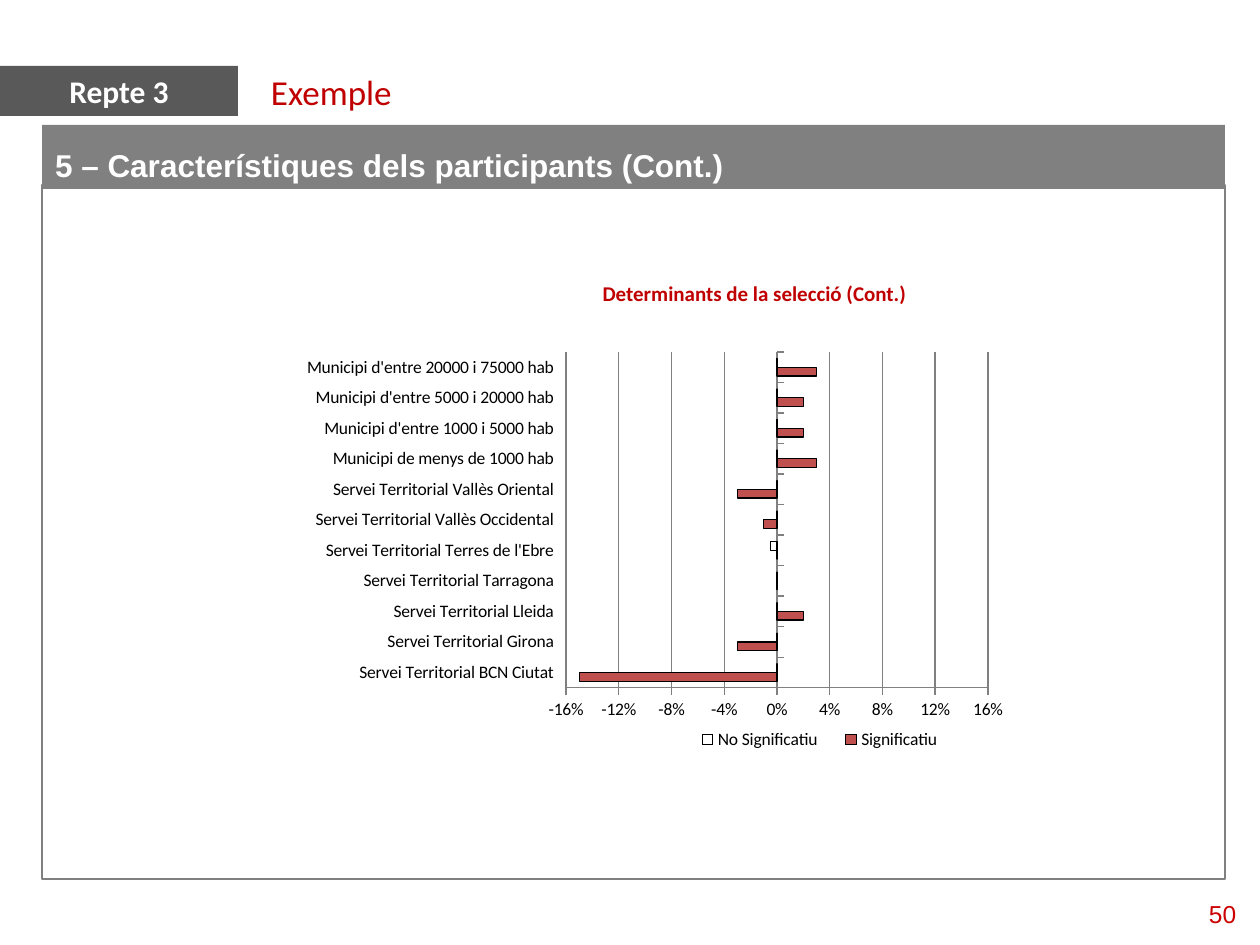
import pptx
import pptx.util
import pptx.chart.data
from lxml import etree
from pptx.dml.color import RGBColor
from pptx.enum.chart import XL_CHART_TYPE, XL_LEGEND_POSITION, XL_TICK_LABEL_POSITION, XL_TICK_MARK
from pptx.enum.shapes import MSO_SHAPE
from pptx.enum.text import MSO_ANCHOR, PP_ALIGN
from pptx.oxml.ns import qn

# Content
COLORS = {"red": "C00000", "number": "CC0000", "grey": "808080", "dark": "595959",
          "bar": "C0504D", "black": "000000", "white": "FFFFFF", "frame": "D9D9D9"}
TITLE = "Exemple"
TAG = "Repte 3"
HEADER = "5 – Característiques dels participants (Cont.)"
CHART_TITLE = "Determinants de la selecció (Cont.)"
PAGE_NUMBER = "50"
SERIES = ("Significatiu", "No Significatiu")
ROWS = [
    ("Servei Territorial BCN Ciutat", -0.15, 0),
    ("Servei Territorial Girona", -0.03, 0),
    ("Servei Territorial Lleida", 0.02, 0),
    ("Servei Territorial Tarragona", 0, 0),
    ("Servei Territorial Terres de l'Ebre", 0, -0.005),
    ("Servei Territorial Vallès Occidental", -0.01, 0),
    ("Servei Territorial Vallès Oriental", -0.03, 0),
    ("Municipi de menys de 1000 hab", 0.03, 0),
    ("Municipi d'entre 1000 i 5000 hab", 0.02, 0),
    ("Municipi d'entre 5000 i 20000 hab", 0.02, 0),
    ("Municipi d'entre 20000 i 75000 hab", 0.03, 0),
]

# Places in px: left, top, width, height
PX = 914400 // 126
BOXES = {
    "number": (1196, 893, 64, 43),
    "title": (258, 64, 928, 50),
    "header": (42, 125, 1183, 64),
    "body": (42, 185, 1183, 694),
    "chart": (292, 344, 725, 423),
    "chart title": (561, 275, 387, 50),
    "tag": (0, 66, 238, 50),
}
PLOT = (566, 352, 422, 336)
LEGEND = (680, 726, 280, 28)


def emu(name):
    return [value * PX for value in BOXES[name]]


def color(name):
    return RGBColor.from_string(COLORS[name])


def set_all(target, **values):
    for name, value in values.items():
        setattr(target, name, value)


def write(shape, text, size, font, ink, bold=False, align=PP_ALIGN.LEFT,
          anchor=MSO_ANCHOR.TOP, top=6, bottom=6):
    frame = shape.text_frame
    set_all(frame, word_wrap=True, vertical_anchor=anchor, margin_left=13 * PX,
            margin_right=13 * PX, margin_top=top * PX, margin_bottom=bottom * PX)
    paragraph = frame.paragraphs[0]
    paragraph.text = text
    paragraph.alignment = align
    set_all(paragraph.font, size=pptx.util.Pt(size), name=font, bold=bold)
    paragraph.font.color.rgb = color(ink)


def add_rectangle(slide, name, fill=None, line=None):
    shape = slide.shapes.add_shape(MSO_SHAPE.RECTANGLE, *emu(name))
    shape.shadow.inherit = False
    paint(shape, fill, line)
    return shape


def paint(target, fill, line):
    if fill:
        target.fill.solid()
        target.fill.fore_color.rgb = color(fill)
    else:
        target.fill.background()
    if line:
        target.line.color.rgb = color(line)
        target.line.width = pptx.util.Pt(0.75)
    else:
        target.line.fill.background()


def place(element, box, inner=False):
    """Fix the plot area or legend at a px box within the chart."""
    left, top, width, height = BOXES["chart"]
    shares = ((box[0] - left) / width, (box[1] - top) / height, box[2] / width, box[3] / height)
    for old in element.findall(qn("c:layout")):
        element.remove(old)
    layout = etree.Element(qn("c:layout"))
    manual = etree.SubElement(layout, qn("c:manualLayout"))
    settings = [("layoutTarget", "inner")] if inner else []
    settings += [("xMode", "edge"), ("yMode", "edge")]
    settings += [(key, f"{share:.3f}") for key, share in zip("xywh", shares)]
    for key, value in settings:
        etree.SubElement(manual, qn(f"c:{key}")).set("val", value)
    element.insert(0 if inner else 1, layout)


def add_chart(slide):
    data = pptx.chart.data.CategoryChartData(number_format="0%")
    data.categories = [row[0] for row in ROWS]
    for column, name in enumerate(SERIES, 1):
        data.add_series(name, [row[column] for row in ROWS])
    chart = slide.shapes.add_chart(XL_CHART_TYPE.BAR_CLUSTERED, *emu("chart"), data).chart
    set_all(chart, has_title=False, has_legend=True)
    set_all(chart.font, size=pptx.util.Pt(10), name="Calibri")
    chart.font.color.rgb = color("black")

    # Bars
    plot = chart.plots[0]
    set_all(plot, gap_width=150, overlap=0, vary_by_categories=False)
    for series, fill in zip(plot.series, ("bar", None)):
        series.invert_if_negative = False
        paint(series.format, fill, "black")

    # Axes
    set_all(chart.category_axis, tick_label_position=XL_TICK_LABEL_POSITION.LOW,
            major_tick_mark=XL_TICK_MARK.INSIDE, has_major_gridlines=False)
    values = chart.value_axis
    set_all(values, minimum_scale=-0.16, maximum_scale=0.16, major_unit=0.04,
            major_tick_mark=XL_TICK_MARK.OUTSIDE, has_major_gridlines=True)
    set_all(values.tick_labels, number_format="0%", number_format_is_linked=False)
    for line in (chart.category_axis.format.line, values.format.line,
                 values.major_gridlines.format.line):
        line.color.rgb = color("grey")
        line.width = pptx.util.Pt(0.75)

    # Plot area and legend
    set_all(chart.legend, position=XL_LEGEND_POSITION.BOTTOM, include_in_layout=False)
    plot_area = chart.plots[0]._element.getparent()
    place(plot_area, PLOT, inner=True)
    place(chart.legend._element, LEGEND)


def main():
    presentation = pptx.Presentation()
    set_all(presentation, slide_width=1260 * PX, slide_height=945 * PX)
    slide = presentation.slides.add_slide(presentation.slide_layouts[5])

    # Title and page number
    title = slide.shapes.title
    set_all(title, **dict(zip(("left", "top", "width", "height"), emu("title"))))
    write(title, TITLE, 20, "Calibri", "red")
    write(slide.shapes.add_textbox(*emu("number")), PAGE_NUMBER, 14, "Arial", "number")

    # Header band and frame
    header = add_rectangle(slide, "header", fill="grey")
    write(header, HEADER, 18, "Arial", "white", bold=True,
          anchor=MSO_ANCHOR.MIDDLE, top=21, bottom=5)
    add_rectangle(slide, "body", line="grey")

    # Chart with its heading
    add_chart(slide)
    write(slide.shapes.add_textbox(*emu("chart title")), CHART_TITLE, 12, "Calibri", "red",
          bold=True, align=PP_ALIGN.CENTER)

    # Section tag
    tag = add_rectangle(slide, "tag", fill="dark")
    write(tag, TAG, 18, "Calibri", "white", bold=True, align=PP_ALIGN.CENTER)

    presentation.save("out.pptx")


if __name__ == "__main__":
    main()
